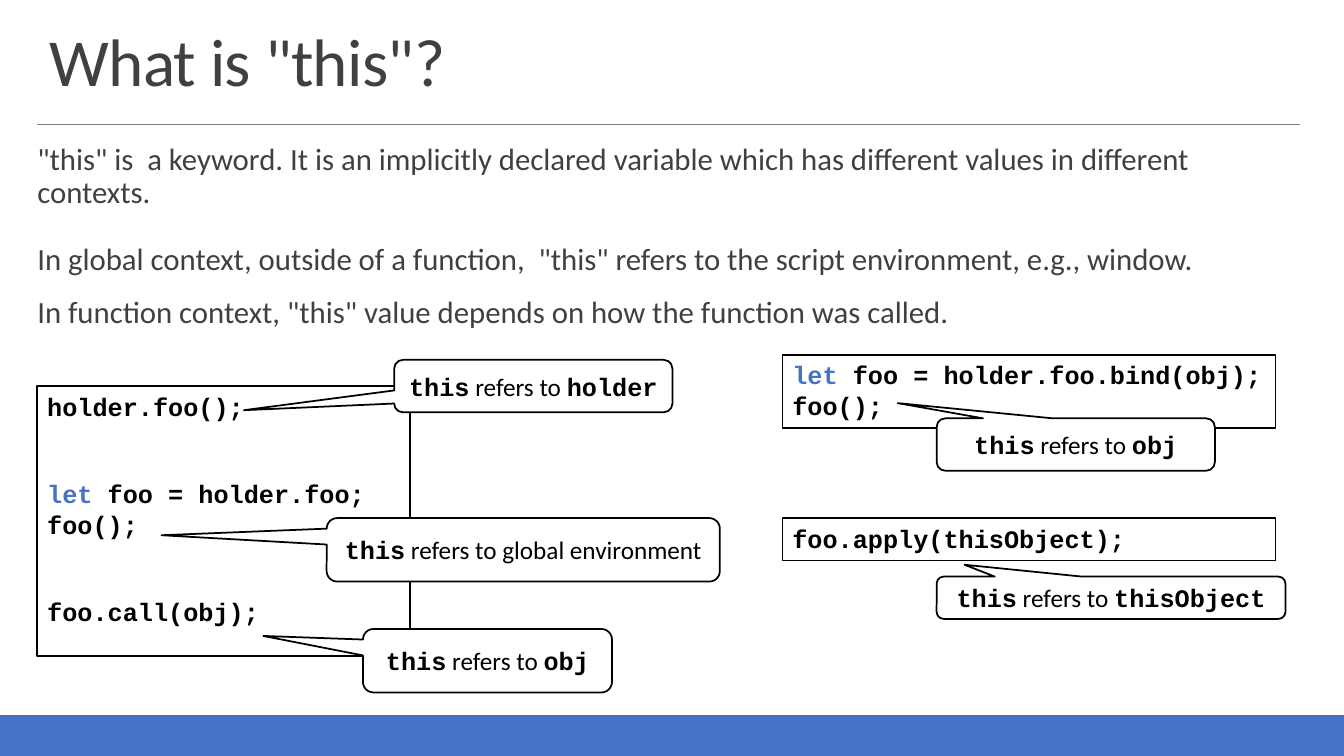
from pptx import Presentation
from pptx.dml.color import RGBColor
from pptx.enum.shapes import MSO_CONNECTOR, MSO_SHAPE
from pptx.enum.text import MSO_ANCHOR, MSO_AUTO_SIZE, PP_ALIGN
from pptx.oxml.ns import qn
from pptx.util import Inches, Pt
from lxml import etree

RECTANGLE = MSO_SHAPE.RECTANGLE
CALLOUT = MSO_SHAPE.ROUNDED_RECTANGULAR_CALLOUT
STRAIGHT = MSO_CONNECTOR.STRAIGHT
TOP, MIDDLE, BOTTOM = MSO_ANCHOR.TOP, MSO_ANCHOR.MIDDLE, MSO_ANCHOR.BOTTOM
LEFT, CENTER = PP_ALIGN.LEFT, PP_ALIGN.CENTER
NO_AUTOFIT = MSO_AUTO_SIZE.NONE

SANS, MONO = "Calibri", "Courier New"
BLUE, BLACK, WHITE, DARK, GRAY = "4472C4", "000000", "FFFFFF", "404040", "808080"


def add_box(kind, place, fill, line, anchor):
    box = page.shapes.add_shape(kind, *map(Inches, place))
    box.shadow.inherit = False
    if fill:
        box.fill.solid()
        box.fill.fore_color.rgb = RGBColor.from_string(fill)
    else:
        box.fill.background()
    box.line.color.rgb = RGBColor.from_string(line)
    box.line.width = Pt(1.25)
    box.text_frame.word_wrap = True
    box.text_frame.vertical_anchor = anchor
    return box


def add_span(para, text, font, size, color):
    """Append a run; code font is always bold."""
    span = para.add_run()
    span.text = text
    span.font.name = font
    span.font.size = Pt(size)
    span.font.bold = font == MONO
    span.font.color.rgb = RGBColor.from_string(color)
    return span


deck = Presentation()
deck.slide_width, deck.slide_height = Inches(13.33), Inches(7.5)
page = deck.slides.add_slide(deck.slide_layouts[5])

# Footer band and title rule
add_box(RECTANGLE, (0, 7.1, 13.33, 0.4), BLUE, BLUE, MIDDLE)
rule = page.shapes.add_connector(
    STRAIGHT, Inches(0.37), Inches(1.23), Inches(12.89), Inches(1.23))
rule.line.color.rgb = RGBColor.from_string(GRAY)
rule.line.width = Pt(0.5)
etree.SubElement(rule.element.spPr, qn("a:effectLst"))

# Title
title = page.shapes.title
title.left, title.top = Inches(0.39), Inches(0.2)
title.width, title.height = Inches(12.52), Inches(0.84)
title.text_frame.auto_size = NO_AUTOFIT
title.text_frame.vertical_anchor = BOTTOM
heading = title.text_frame.paragraphs[0]
heading.alignment = LEFT
heading.line_spacing = 0.85
heading_span = add_span(heading, 'What is "this"?', SANS, 48, DARK)
heading_span.font._element.set("spc", "-50")

# Explanation: text and space before in points
explanation = [
    ('"this" is  a keyword. It is an implicitly declared variable which has '
     'different values in different contexts.', 0),
    ('In global context, outside of a function,  "this" refers to the script '
     'environment, e.g., window.', 24),
    ('In function context, "this" value depends on how the function was called.', 14),
]
body = page.shapes.add_textbox(Inches(0.37), Inches(1.39), Inches(12.52), Inches(1.97))
frame = body.text_frame
frame.word_wrap = True
frame.margin_left = frame.margin_right = 0
frame.margin_top = frame.margin_bottom = Inches(0.04)
for index, (text, gap) in enumerate(explanation):
    para = frame.add_paragraph() if index else frame.paragraphs[0]
    para.line_spacing = 0.9
    para.space_before = Pt(gap)
    add_span(para, text, SANS, 22, DARK)

# Each example: code place, code lines (text, space before in points),
# callouts (place, pointer, plain words, code words)
examples = [
    ((0.37, 3.83, 3.7, 2.68),
     [("holder.foo();", 0), ("let foo = holder.foo;", 41), ("foo();", 0),
      ("foo.call(obj);", 41)],
     [((3.24, 5.14, 3.9, 0.63), (-0.92, -0.23), " refers to global environment", ""),
      ((3.91, 3.57, 2.76, 0.52), (-1.04, 0.46), " refers to ", "holder"),
      ((3.6, 6.24, 2.47, 0.63), (-0.9, -0.39), " refers to ", "obj")]),
    ((7.76, 3.52, 4.89, 0.73),
     [("let foo = holder.foo.bind(obj);", 0), ("foo();", 0)],
     [((9.29, 4.15, 2.76, 0.52), (-0.64, -0.79), " refers to ", "obj")]),
    ((7.76, 5.14, 4.89, 0.42),
     [("foo.apply(thisObject);", 0)],
     [((9.29, 5.72, 3.46, 0.42), (-0.42, -0.78), " refers to ", "thisObject")]),
]
for code_place, code_lines, callouts in examples:
    frame = add_box(RECTANGLE, code_place, None, BLACK, TOP).text_frame
    for index, (code, gap) in enumerate(code_lines):
        para = frame.add_paragraph() if index else frame.paragraphs[0]
        para.alignment = LEFT
        para.space_before = Pt(gap)
        if code.startswith("let"):
            add_span(para, "let", MONO, 18, BLUE)
        add_span(para, code.removeprefix("let"), MONO, 18, BLACK)

    for place, pointer, words, target in callouts:
        callout = add_box(CALLOUT, place, WHITE, BLACK, MIDDLE)
        callout.adjustments[0], callout.adjustments[1] = pointer
        para = callout.text_frame.paragraphs[0]
        para.alignment = CENTER
        add_span(para, "this", MONO, 18, BLACK)
        add_span(para, words, SANS, 18, BLACK)
        if target:
            add_span(para, target, MONO, 18, BLACK)

deck.save("out.pptx")
